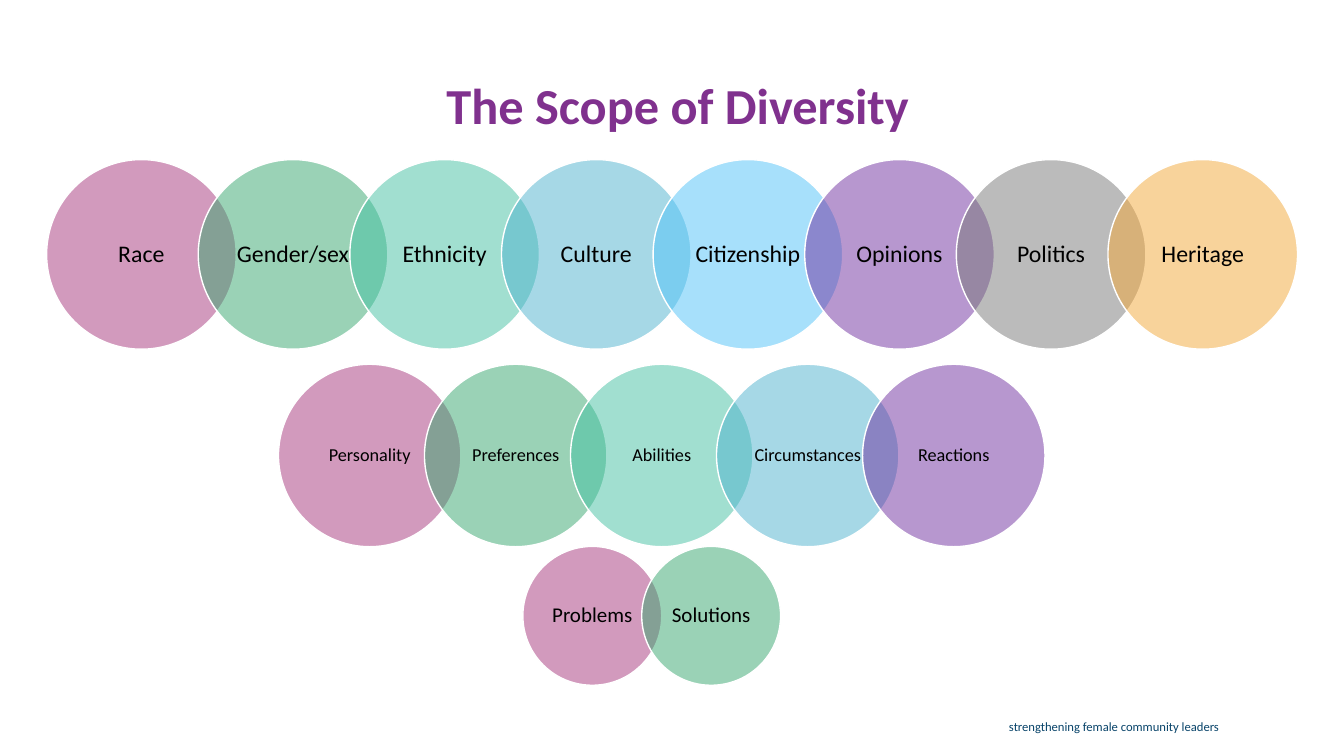
from pptx import Presentation
from pptx.util import Pt
from pptx.dml.color import RGBColor
from pptx.enum.shapes import MSO_SHAPE
from pptx.enum.text import MSO_ANCHOR, MSO_AUTO_SIZE, PP_ALIGN
from lxml.etree import SubElement
from pptx.oxml.ns import qn

HUES = {
    "title": "80318E", "foot": "09446A", "text": "000000", "edge": "FFFFFF",
    "rose": "A6377D", "green": "37A76F", "mint": "44C1A3", "teal": "4EB3CF",
    "sky": "51C3F9", "plum": "7030A0", "grey": "797979", "gold": "F3A839",
}


def color(name):
    return RGBColor.from_string(HUES[name])


def write(frame, text, size, hue, align, bold=False):
    para = frame.paragraphs[0]
    para.alignment = align
    run = para.add_run()
    run.text = text
    run.font.name = "Calibri"
    run.font.size = Pt(size)
    run.font.bold = bold
    run.font.color.rgb = color(hue)
    return para


deck = Presentation()
deck.slide_width, deck.slide_height = Pt(960), Pt(540)
slide = deck.slides.add_slide(deck.slide_layouts[5])

# Title
title = slide.shapes.title
title.left, title.top, title.width, title.height = Pt(57.6), Pt(57.6), Pt(853.2), Pt(45.4)
frame = title.text_frame
frame.auto_size = MSO_AUTO_SIZE.NONE
frame.vertical_anchor = MSO_ANCHOR.TOP
para = write(frame, "The Scope of Diversity", 36, "title", PP_ALIGN.CENTER, True)
para.line_spacing = 0.8

# Rows of overlapping circles: left, top, size, pitch, font size, labels
rows = [
    (33.3, 114, 135.4, 108.3, 17, [
        ("Race", "rose"), ("Gender/sex", "green"), ("Ethnicity", "mint"),
        ("Culture", "teal"), ("Citizenship", "sky"), ("Opinions", "plum"),
        ("Politics", "grey"), ("Heritage", "gold")]),
    (198.9, 260.2, 130.3, 104.3, 13, [
        ("Personality", "rose"), ("Preferences", "green"), ("Abilities", "mint"),
        ("Circumstances", "teal"), ("Reactions", "plum")]),
    (373.5, 390.3, 99.2, 84.9, 15, [("Problems", "rose"), ("Solutions", "green")]),
]
for left, top, size, pitch, points, labels in rows:
    for i, (label, hue) in enumerate(labels):
        disc = slide.shapes.add_shape(
            MSO_SHAPE.OVAL, Pt(left + i * pitch), Pt(top), Pt(size), Pt(size))
        disc.shadow.inherit = False
        disc.fill.solid()
        disc.fill.fore_color.rgb = color(hue)
        # Half transparent fill
        tint = disc.fill._xPr.find(qn("a:solidFill"))[0]
        SubElement(tint, qn("a:alpha"), val="50000")
        disc.line.color.rgb = color("edge")
        disc.line.width = Pt(1)
        frame = disc.text_frame
        frame.word_wrap = False
        frame.vertical_anchor = MSO_ANCHOR.MIDDLE
        frame.margin_top = frame.margin_bottom = Pt(1.4)
        para = write(frame, label, points, "text", PP_ALIGN.CENTER)
        para.line_spacing = 0.9

# Footer
foot = slide.shapes.add_textbox(Pt(100), Pt(509.8), Pt(777.7), Pt(18))
foot.text_frame.word_wrap = True
write(foot.text_frame, "strengthening female community leaders", 9, "foot", PP_ALIGN.RIGHT)

deck.save("out.pptx")
